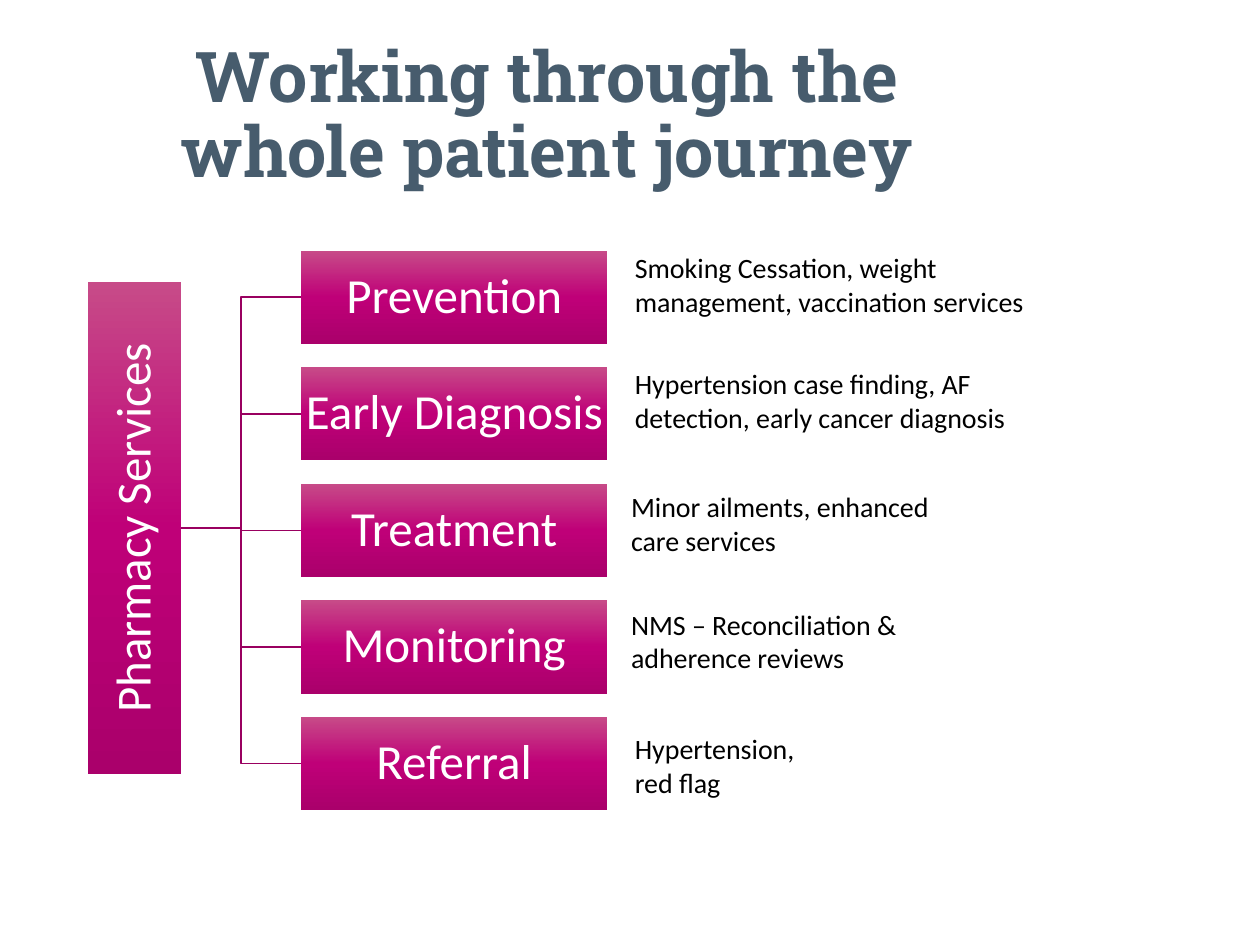
import copy
from dataclasses import dataclass

import pptx
import pptx.dml.color
import pptx.enum.shapes
import pptx.enum.text
import pptx.oxml.ns
import pptx.util

Inches = pptx.util.Inches
Pt = pptx.util.Pt
RGBColor = pptx.dml.color.RGBColor
Align = pptx.enum.text.PP_ALIGN
Anchor = pptx.enum.text.MSO_ANCHOR

SLATE = RGBColor(0x47, 0x5C, 0x6D)
PLUM = RGBColor(0x99, 0x00, 0x60)
WHITE = RGBColor(0xFF, 0xFF, 0xFF)
BLACK = RGBColor(0x00, 0x00, 0x00)
SHADES = (
    RGBColor(0xC7, 0x4B, 0x88),
    RGBColor(0xBF, 0x00, 0x78),
    RGBColor(0xAA, 0x00, 0x6B),
)

# Tree layout, in inches
ROOT_LEFT, ROOT_TOP, ROOT_LONG = -0.88, 3.82, 3.9
BOX_LEFT, BOX_TOP, BOX_WIDE, BOX_HIGH = 2.39, 1.99, 2.43, 0.74
PITCH = 0.925
STEM_X, STEM_Y = 1.44, 4.19
BEND_X = (STEM_X + BOX_LEFT) / 2


@dataclass
class Stage:
    name: str
    note: str
    left: float
    top: float
    wide: float


STAGES = [
    Stage("Prevention", "Smoking Cessation, weight management, vaccination services", 4.94, 1.94, 3.58),
    Stage("Early Diagnosis", "Hypertension case finding, AF detection, early cancer diagnosis", 4.94, 2.86, 3.58),
    Stage("Treatment", "Minor ailments, enhanced care services", 4.91, 3.84, 2.71),
    Stage("Monitoring", "NMS – Reconciliation & adherence reviews", 4.91, 4.77, 2.71),
    Stage("Referral", "Hypertension, red flag", 4.94, 5.76, 1.52),
]


def style(frame, face: str, size: float, color: RGBColor, bold: bool = False) -> None:
    for run in frame.paragraphs[0].runs:
        run.font.name = face
        run.font.size = Pt(size)
        run.font.color.rgb = color
        run.font.bold = bold


def center(frame) -> None:
    frame.word_wrap = True
    frame.vertical_anchor = Anchor.MIDDLE
    frame.paragraphs[0].alignment = Align.CENTER
    frame.paragraphs[0].line_spacing = 0.9


def shade(shape) -> None:
    """Fill from light at the top to dark at the bottom, even when turned."""
    fill = shape.fill
    fill.gradient()
    fill.gradient_angle = 270
    grad = shape._element.spPr.find(pptx.oxml.ns.qn("a:gradFill"))
    grad.set("rotWithShape", "0")
    stops = grad.find(pptx.oxml.ns.qn("a:gsLst"))
    stops.insert(1, copy.deepcopy(stops[0]))
    for stop, color, place in zip(fill.gradient_stops, SHADES, (0, 0.5, 1)):
        stop.color.rgb = color
        stop.position = place


def add_box(slide, text: str, left: float, top: float, wide: float, turn: float = 0) -> None:
    box = slide.shapes.add_shape(
        pptx.enum.shapes.MSO_SHAPE.RECTANGLE,
        Inches(left), Inches(top), Inches(wide), Inches(BOX_HIGH))
    box.rotation = turn
    box.shadow.inherit = False
    box.line.fill.background()
    shade(box)
    frame = box.text_frame
    frame.margin_left = frame.margin_right = Inches(0.02)
    frame.margin_top = frame.margin_bottom = Inches(0.02)
    frame.text = text
    center(frame)
    style(frame, "Calibri", 28, WHITE)


def add_branch(slide, end: float) -> None:
    path = slide.shapes.build_freeform(Inches(STEM_X), Inches(STEM_Y))
    path.add_line_segments(
        [(Inches(x), Inches(y)) for x, y in
         ((BEND_X, STEM_Y), (BEND_X, end), (BOX_LEFT, end))],
        close=False)
    line = path.convert_to_shape()
    line.shadow.inherit = False
    line.fill.background()
    line.line.color.rgb = PLUM
    line.line.width = Pt(1)


def add_note(slide, stage: Stage) -> None:
    note = slide.shapes.add_textbox(
        Inches(stage.left), Inches(stage.top), Inches(stage.wide), Inches(0.64))
    frame = note.text_frame
    frame.word_wrap = True
    frame.auto_size = pptx.enum.text.MSO_AUTO_SIZE.SHAPE_TO_FIT_TEXT
    frame.text = stage.note
    style(frame, "Calibri", 16, BLACK)


def main() -> None:
    deck = pptx.Presentation()
    deck.slide_width, deck.slide_height = Inches(10), Inches(7.5)
    slide = deck.slides.add_slide(deck.slide_layouts[5])

    # Title
    title = slide.shapes.title
    title.left, title.top = Inches(0.94), Inches(0.27)
    title.width, title.height = Inches(6.8), Inches(1.32)
    title.text_frame.text = "Working through the whole patient journey"
    center(title.text_frame)
    style(title.text_frame, "Roboto Slab", 40, SLATE, bold=True)

    # Branches lie behind the boxes
    tops = [BOX_TOP + PITCH * i for i in range(len(STAGES))]
    for top in reversed(tops):
        add_branch(slide, top + BOX_HIGH / 2)

    # Root and stage boxes
    add_box(slide, "Pharmacy Services", ROOT_LEFT, ROOT_TOP, ROOT_LONG, turn=270)
    for stage, top in zip(STAGES, tops):
        add_box(slide, stage.name, BOX_LEFT, top, BOX_WIDE)

    # Notes beside the stages
    for stage in STAGES:
        add_note(slide, stage)

    deck.save("out.pptx")


if __name__ == "__main__":
    main()
